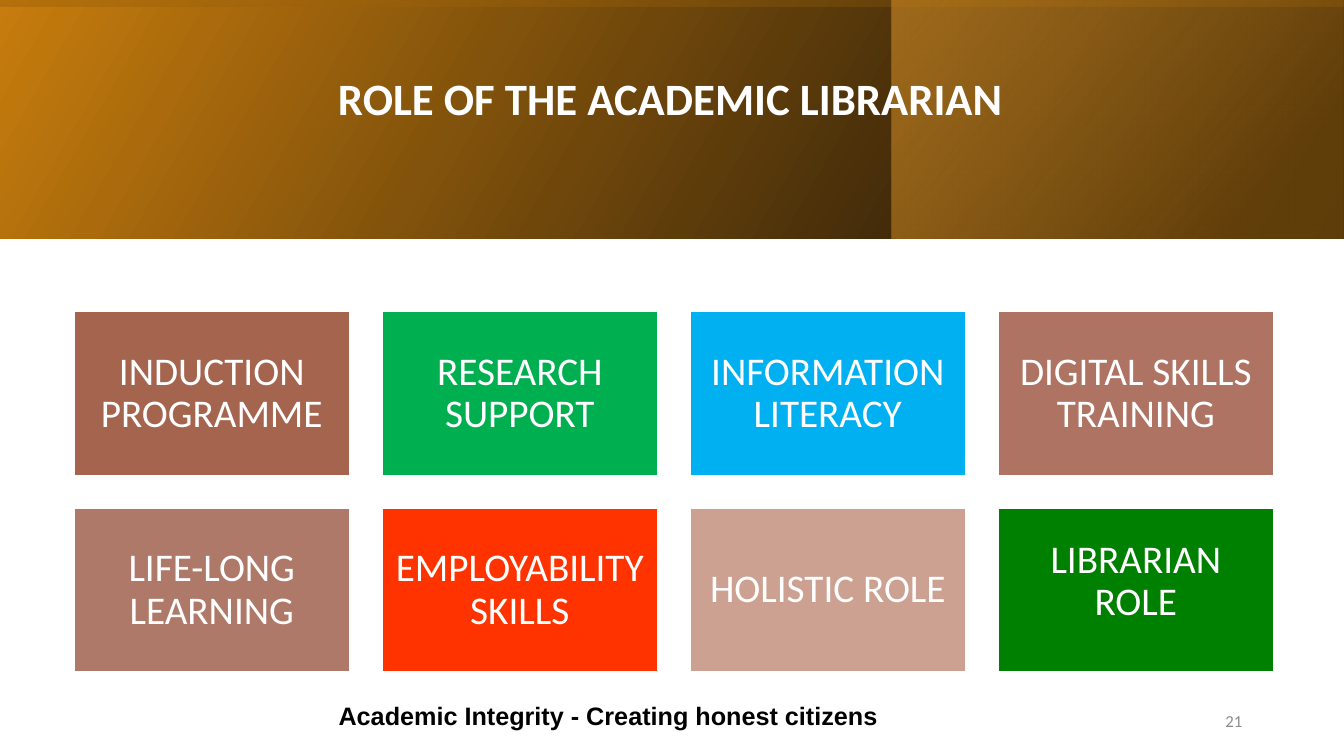
import pptx
import pptx.dml.color
import pptx.enum.shapes
import pptx.enum.text
import pptx.oxml
import pptx.oxml.ns
import pptx.util
from dataclasses import dataclass
from pptx.util import Inches

ALIGN = pptx.enum.text.PP_ALIGN
ANCHOR = pptx.enum.text.MSO_ANCHOR
RECTANGLE = pptx.enum.shapes.MSO_SHAPE.RECTANGLE


@dataclass(frozen=True)
class Theme:
    white: str = "FFFFFF"
    black: str = "000000"
    grey: str = "8C8C8C"
    orange: str = "C87D0E"
    brown: str = "85540A"
    amber: str = "F0A22E"
    font: str = "Calibri"
    motto_font: str = "Arial"
    title_size: int = 32
    card_size: int = 28
    motto_size: int = 18
    number_size: int = 12


theme = Theme()


def write(shape, text, font, size, color, bold=False, align=ALIGN.CENTER, spacing=1.0, **frame_format):
    """Put one formatted paragraph in the shape; frame_format sets its text frame."""
    frame = shape.text_frame
    frame.text = text
    frame_format = {"word_wrap": True, "auto_size": pptx.enum.text.MSO_AUTO_SIZE.NONE,
                    "vertical_anchor": ANCHOR.MIDDLE, **frame_format}
    for name, value in frame_format.items():
        setattr(frame, name, value)
    paragraph = frame.paragraphs[0]
    paragraph.alignment = align
    paragraph.line_spacing = spacing
    for name, value in {"name": font, "size": pptx.util.Pt(size), "bold": bold}.items():
        setattr(paragraph.font, name, value)
    paragraph.font.color.rgb = pptx.dml.color.RGBColor.from_string(color)


deck = pptx.Presentation()
deck.slide_width, deck.slide_height = Inches(13.33), Inches(7.5)
slide = deck.slides.add_slide(deck.slide_layouts[5])

# Header: three mirrored gradient bands, stops as (position %, colour, opacity %)
bands = [
    ((0, 0, 13.33, 2.37), 0, 330, [(0, theme.black, 96), (100, theme.orange, 100)]),
    ((8.84, 0, 4.48, 2.37), 0, 320, [(19, theme.brown, 68), (100, theme.amber, 48)]),
    ((5.48, -5.48, 2.37, 13.33), 270, 350, [(23, theme.orange, 16), (99, theme.black, 45)]),
]
for box, rotation, angle, stops in bands:
    band = slide.shapes.add_shape(RECTANGLE, *map(Inches, box))
    band.rotation = rotation
    band.shadow.inherit = False
    band.line.fill.background()
    stop_xml = "".join(
        f'<a:gs pos="{position * 1000}"><a:srgbClr val="{color}">'
        f'<a:alpha val="{opacity * 1000}"/></a:srgbClr></a:gs>'
        for position, color, opacity in stops)
    gradient = pptx.oxml.parse_xml(
        f'<a:gradFill {pptx.oxml.ns.nsdecls("a")} rotWithShape="1"><a:gsLst>{stop_xml}</a:gsLst>'
        f'<a:lin ang="{angle * 60000}" scaled="0"/></a:gradFill>')
    properties = band.element.spPr
    properties.find(pptx.oxml.ns.qn("a:xfrm")).set("flipH", "1")
    properties.find(pptx.oxml.ns.qn("a:prstGeom")).addnext(gradient)

# Title, brought in front of the bands
title = slide.shapes.title
title.left, title.top, title.width, title.height = map(Inches, (0.57, 0.38, 12.26, 1.72))
write(title, "ROLE OF THE ACADEMIC LIBRARIAN", theme.font, theme.title_size, theme.white,
      bold=True, spacing=0.9, margin_right=Inches(0.2), margin_bottom=Inches(0.53))
title.element.getparent().append(title.element)

# Roles: four cards a row; the last number is the bottom inset
roles = [
    ("INDUCTION PROGRAMME", "A5644E", 0.12),
    ("RESEARCH SUPPORT", "00B050", 0.12),
    ("INFORMATION LITERACY", "00B0F0", 0.12),
    ("DIGITAL SKILLS TRAINING", "AE7362", 0.12),
    ("LIFE-LONG LEARNING", "AF7969", 0.12),
    ("EMPLOYABILITY SKILLS", "FF3300", 0.12),
    ("HOLISTIC ROLE", "CCA192", 0.12),
    ("LIBRARIAN ROLE", "008000", 0.29),
]
for index, (role, color, bottom_inset) in enumerate(roles):
    row, column = divmod(index, 4)
    card = slide.shapes.add_shape(RECTANGLE, Inches(0.71 + 3.055 * column),
                                  Inches(3.07 + 1.95 * row), Inches(2.78), Inches(1.67))
    card.shadow.inherit = False
    card.fill.solid()
    card.fill.fore_color.rgb = pptx.dml.color.RGBColor.from_string(color)
    card.line.color.rgb = pptx.dml.color.RGBColor.from_string(theme.white)
    card.line.width = pptx.util.Pt(4.33)
    write(card, role, theme.font, theme.card_size, theme.white, spacing=0.9,
          margin_left=Inches(0.12), margin_right=Inches(0.12),
          margin_top=Inches(0.12), margin_bottom=Inches(bottom_inset))

# Footer
motto = slide.shapes.add_textbox(Inches(3.26), Inches(6.9), Inches(6.03), Inches(0.4))
write(motto, "Academic Integrity - Creating honest citizens", theme.motto_font, theme.motto_size,
      theme.black, bold=True, align=ALIGN.LEFT, vertical_anchor=ANCHOR.TOP)
page_number = slide.shapes.add_textbox(Inches(9.42), Inches(6.95), Inches(3), Inches(0.4))
write(page_number, "21", theme.font, theme.number_size, theme.grey, align=ALIGN.RIGHT)

deck.save("out.pptx")
